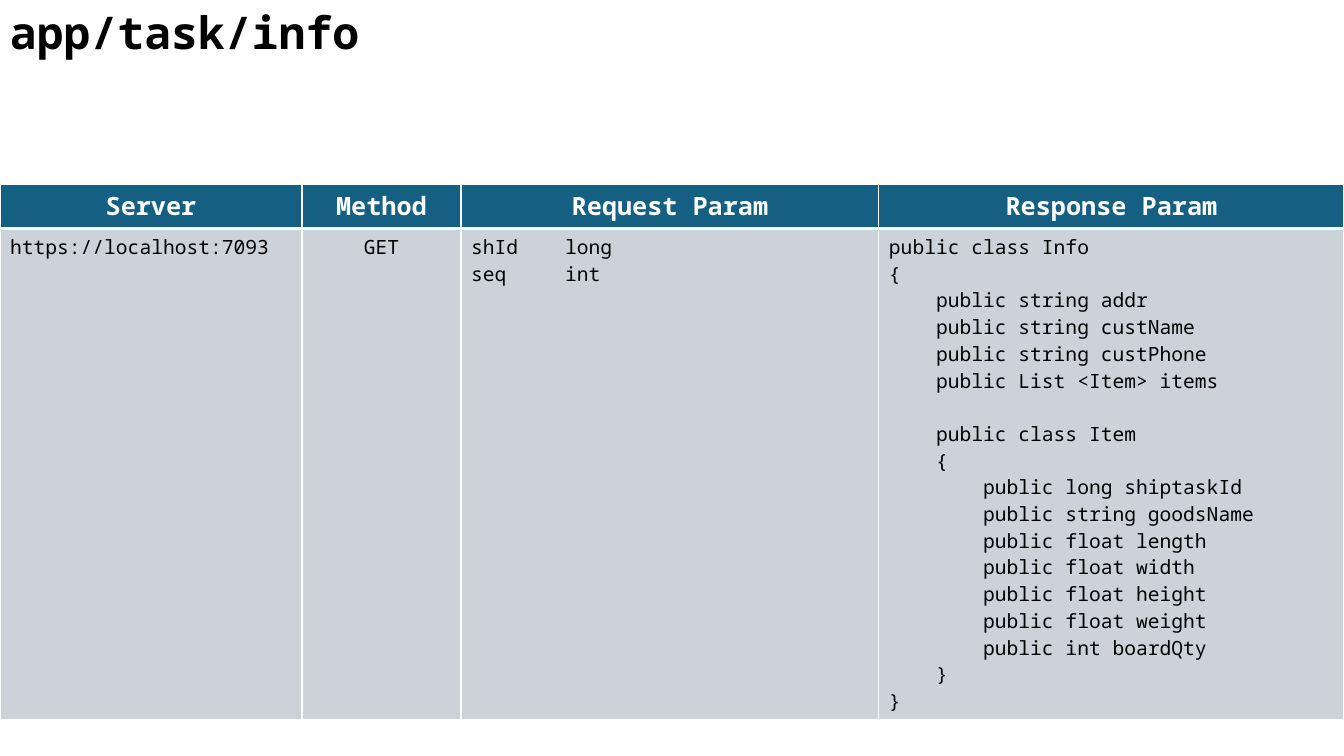
from lxml import etree
from pptx import Presentation
from pptx import util as u
from pptx.dml.color import RGBColor
from pptx.enum import text
from pptx.oxml.ns import qn

PX = 914400 / 100.8
FONT = "Noto Sans Mono"
BLACK = RGBColor(0x00, 0x00, 0x00)
WHITE = RGBColor(0xFF, 0xFF, 0xFF)
HEADER_BLUE = RGBColor(0x15, 0x60, 0x82)
BODY_GREY = RGBColor(0xCC, 0xD2, 0xD8)
LEFT, CENTER = text.PP_ALIGN.LEFT, text.PP_ALIGN.CENTER

COLUMNS = [("Server", 302), ("Method", 159), ("Request Param", 418), ("Response Param", 465)]
ROW_HEIGHTS = [41, 434]
TYPE_TAB = 94
RESPONSE_CODE = """public class Info
{
    public string addr
    public string custName
    public string custPhone
    public List <Item> items

    public class Item
    {
        public long shiptaskId
        public string goodsName
        public float length
        public float width
        public float height
        public float weight
        public int boardQty
    }
}"""
BODY = [
    ("https://localhost:7093", LEFT),
    ("GET", CENTER),
    ("shId\tlong\nseq\tint", LEFT),
    (RESPONSE_CODE, LEFT),
]


def px(length):
    """Turn pixels into EMU."""
    return u.Emu(round(length * PX))


def add_tab_stop(paragraph, position):
    """Give a paragraph one left tab stop."""
    tabs = etree.SubElement(paragraph._p.get_or_add_pPr(), qn("a:tabLst"))
    etree.SubElement(tabs, qn("a:tab"), pos=str(px(position)), algn="l")


def write_lines(frame, content, size, color, bold=False, align=LEFT):
    """Write each line of the content as a paragraph with one run."""
    for index, line in enumerate(content.split("\n")):
        paragraph = frame.add_paragraph() if index else frame.paragraphs[0]
        paragraph.alignment = align
        if "\t" in line:
            add_tab_stop(paragraph, TYPE_TAB)
        if not line:
            end = etree.SubElement(paragraph._p, qn("a:endParaRPr"), sz=str(size * 100))
            etree.SubElement(end, qn("a:latin"), typeface=FONT)
            continue
        run = paragraph.add_run()
        run.text = line
        run.font.name = FONT
        run.font.size = u.Pt(size)
        run.font.bold = bold
        run.font.color.rgb = color


def add_borders(cell, bottom):
    """Draw white cell borders, with the bottom width in points."""
    properties = cell._tc.get_or_add_tcPr()
    for side, width in (("L", 1), ("R", 1), ("T", 1), ("B", bottom)):
        line = etree.SubElement(properties, qn(f"a:ln{side}"), w=str(u.Pt(width)))
        fill = etree.SubElement(line, qn("a:solidFill"))
        etree.SubElement(fill, qn("a:srgbClr"), val=str(WHITE))


def fill_cell(cell, content, size, color, background, bold, align, bottom):
    """Style one table cell and write its text."""
    add_borders(cell, bottom)
    cell.fill.solid()
    cell.fill.fore_color.rgb = background
    write_lines(cell.text_frame, content, size, color, bold, align)


def add_api_table(slide):
    """Add the table that describes the endpoint."""
    width = sum(column_width for _, column_width in COLUMNS)
    table = slide.shapes.add_table(
        len(ROW_HEIGHTS), len(COLUMNS), 0, px(184), px(width), px(sum(ROW_HEIGHTS))
    ).table
    for row, height in zip(table.rows, ROW_HEIGHTS):
        row.height = px(height)
    for index, ((heading, column_width), (content, align)) in enumerate(zip(COLUMNS, BODY)):
        table.columns[index].width = px(column_width)
        fill_cell(table.cell(0, index), heading, 18, WHITE, HEADER_BLUE, True, CENTER, 3)
        fill_cell(table.cell(1, index), content, 14, BLACK, BODY_GREY, False, align, 1)


def add_title(slide, title):
    """Add the endpoint path as the slide heading."""
    frame = slide.shapes.add_textbox(0, 0, px(644), px(64)).text_frame
    frame.word_wrap = True
    frame.auto_size = text.MSO_AUTO_SIZE.SHAPE_TO_FIT_TEXT
    write_lines(frame, title, 32, BLACK, bold=True)


def main():
    """Build and save the slide."""
    presentation = Presentation()
    presentation.slide_width, presentation.slide_height = px(1344), px(756)
    slide = presentation.slides.add_slide(presentation.slide_layouts[6])
    add_api_table(slide)
    add_title(slide, "app/task/info")
    presentation.save("out.pptx")


if __name__ == "__main__":
    main()
